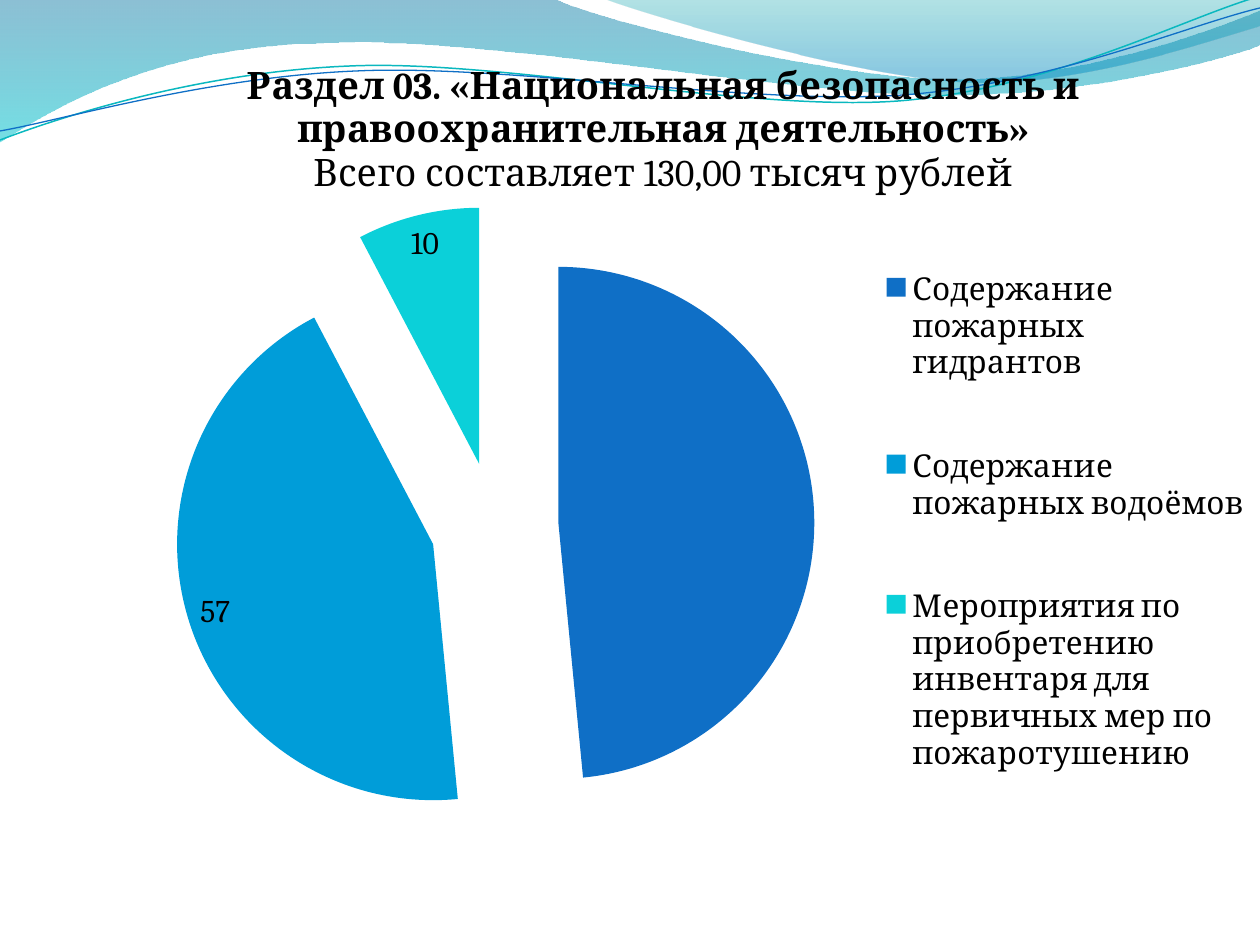
import pptx
import pptx.util
import pptx.chart.data
import pptx.dml.color
import pptx.enum.chart
import pptx.enum.text
import pptx.oxml
import pptx.oxml.ns

PX = 914400 / 126
CHART = (59, 37, 1201, 873)
THEME = {
    "font": "Cambria", "text": "000000", "title_size": 21.6, "body_size": 18,
    "slices": ["0F6FC6", "009DD9", "0BD0D9"],
    "wave": [(0, "0074A1", 45), (1, "00C6CF", 55)],
    "crest": [(0, "00A1A9", 30), (0.8, "008BBF", 45)],
    "teal_line": "0AB8BF", "blue_line": "0F6FC6",
}
rgb = pptx.dml.color.RGBColor.from_string
qn = pptx.oxml.ns.qn
nsdecls = pptx.oxml.ns.nsdecls


def add_curve(shapes, start, segments, close):
    points = [seg[i:i + 2] for seg in segments for i in range(0, len(seg), 2)]
    fb = shapes.build_freeform(*start, scale=PX)
    fb.add_line_segments(points, close=close)
    sp = fb.convert_to_shape()
    sp.shadow.inherit = False
    steps = iter(list(sp._element.iter(qn("a:lnTo"))))
    for seg in segments:
        step = next(steps)
        if len(seg) == 6:
            curve = pptx.oxml.parse_xml(f'<a:cubicBezTo {nsdecls("a")}/>')
            step.addprevious(curve)
            for part in (step, next(steps), next(steps)):
                curve.append(part[0])
                part.getparent().remove(part)
    return sp


def set_layout(parent, index, x, y, w=None, h=None, inner=False):
    for old in parent.findall(qn("c:layout")):
        parent.remove(old)
    items = [("layoutTarget", "inner")] if inner else []
    items += [("xMode", "edge"), ("yMode", "edge"), ("x", x / CHART[2]), ("y", y / CHART[3])]
    if w:
        items += [("w", w / CHART[2]), ("h", h / CHART[3])]
    body = "".join(f'<c:{k} val="{v}"/>' for k, v in items)
    parent.insert(index, pptx.oxml.parse_xml(
        f'<c:layout {nsdecls("c")}><c:manualLayout>{body}</c:manualLayout></c:layout>'))


prs = pptx.Presentation()
prs.slide_width = pptx.util.Inches(10)
prs.slide_height = pptx.util.Inches(7.5)
s = prs.slides.add_slide(prs.slide_layouts[6])

waves = [
    ((0, 0), [(554, -1), (600, 21, 837, 79, 955, 79), (1074, 79, 1207, 33, 1260, 11),
              (1261, 45), (1238, 55, 1096, 96, 940, 95), (784, 95, 481, 35, 324, 43),
              (163, 45, 58, 105, -1, 142), (0, 0)], THEME["wave"]),
    ((604, -1), [(641, 14, 859, 78, 969, 82), (1079, 86, 1211, 40, 1260, 26),
                 (1260, 0), (604, -1)], THEME["crest"]),
]
for start, segments, stops in waves:
    sp = add_curve(s.shapes, start, segments, True)
    sp.line.fill.background()
    sp.fill.gradient()
    sp.fill.gradient_angle = 270
    for stop, (position, color, alpha) in zip(sp.fill.gradient_stops, stops):
        stop.position = position
        stop.color.rgb = rgb(color)
    for clr, (position, color, alpha) in zip(sp._element.spPr.iter(qn("a:srgbClr")), stops):
        clr.append(pptx.oxml.parse_xml(f'<a:alpha {nsdecls("a")} val="{alpha * 1000}"/>'))

lines = [
    ((0, 140), [(60, 117, 199, 72, 349, 66), (498, 59, 747, 112, 898, 101),
                (1050, 89, 1182, 19, 1257, -3)], THEME["teal_line"], 0.85),
    ((0, 131), [(59, 121, 207, 77, 357, 71), (508, 64, 752, 106, 903, 95),
                (1053, 84, 1185, 26, 1260, 8)], THEME["blue_line"], 0.75),
]
for start, segments, color, width in lines:
    sp = add_curve(s.shapes, start, segments, False)
    sp.fill.background()
    sp.line.color.rgb = rgb(color)
    sp.line.width = pptx.util.Pt(width)

data = pptx.chart.data.CategoryChartData()
data.categories = [
    "Содержание пожарных гидрантов",
    "Содержание пожарных водоёмов",
    "Мероприятия по приобретению инвентаря для первичных мер по пожаротушению",
]
data.add_series("Series 1", [63, 57, 10])
box = [round(v * PX) for v in CHART]
chart = s.shapes.add_chart(pptx.enum.chart.XL_CHART_TYPE.PIE, *box, data).chart
chart.font.name = THEME["font"]
chart.font.size = pptx.util.Pt(THEME["body_size"])
chart.font.color.rgb = rgb(THEME["text"])

chart.has_title = True
tf = chart.chart_title.text_frame
tf.text = ("Раздел 03. «Национальная безопасность и правоохранительная деятельность»\n"
           "Всего составляет 130,00 тысяч рублей")
for p, bold in zip(tf.paragraphs, (True, False)):
    p.alignment = pptx.enum.text.PP_ALIGN.CENTER
    for r in p.runs:
        r.font.name = THEME["font"]
        r.font.size = pptx.util.Pt(THEME["title_size"])
        r.font.bold = bold
        r.font.color.rgb = rgb(THEME["text"])
set_layout(chart.chart_title._element, 1, 184, 22)

chart.has_legend = True
chart.legend.position = pptx.enum.chart.XL_LEGEND_POSITION.RIGHT
chart.legend.include_in_layout = False
set_layout(chart.legend._element, 1, 832, 168, 369, 634)
set_layout(chart._chartSpace.xpath("c:chart/c:plotArea")[0], 0, 70, 169, 731, 640, True)

plot = chart.plots[0]
plot.vary_by_categories = True
series = plot.series[0]
series._element.find(qn("c:cat")).addprevious(pptx.oxml.parse_xml(
    f'<c:explosion {nsdecls("c")} val="25"/>'))
for i, color in enumerate(THEME["slices"]):
    fill = series.points[i].format.fill
    fill.solid()
    fill.fore_color.rgb = rgb(color)

labels = series.data_labels
labels.show_value = True
labels.position = pptx.enum.chart.XL_LABEL_POSITION.BEST_FIT
labels._element.insert(0, pptx.oxml.parse_xml(
    f'<c:dLbl {nsdecls("c")}><c:idx val="0"/><c:delete val="1"/></c:dLbl>'))

prs.save("out.pptx")
